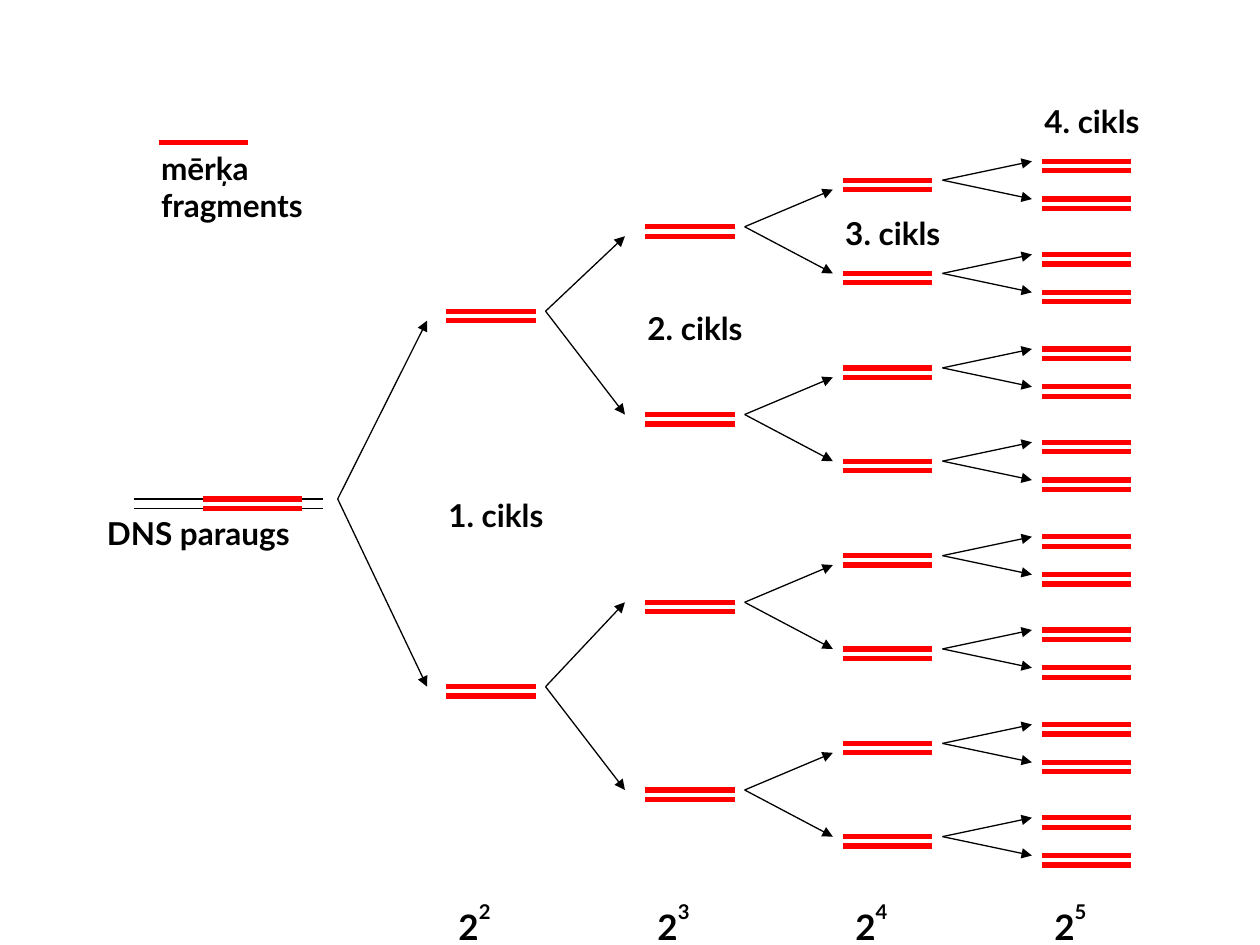
from dataclasses import dataclass

from lxml.etree import SubElement
from pptx import Presentation
from pptx.dml.color import RGBColor
from pptx.enum.shapes import MSO_CONNECTOR
from pptx.enum.text import MSO_AUTO_SIZE
from pptx.oxml.ns import qn
from pptx.util import Inches, Pt

BLACK = RGBColor(0, 0, 0)
RED = RGBColor(255, 0, 0)
FONT = "Lato"
WIDTH = 0.71
GAP = 0.075
ROOT = 3.96


@dataclass
class Cycle:
    left: float
    start: float
    end: float
    rise: float
    fall: float
    drops: tuple
    label: float


CYCLES = [
    Cycle(3.54, 2.68, 3.39, 1.49, 1.49, (GAP,), 3.89),
    Cycle(5.12, 4.33, 4.96, 0.67, 0.82, (GAP, 0), 2.4),
    Cycle(6.69, 5.91, 6.61, 0.37, 0.37, (GAP,) * 4, 1.65),
    Cycle(8.27, 7.48, 8.19, 0.15, 0.15, (0,) * 8, 0.76),
]


def add_line(slide, x1, y1, x2, y2, color=BLACK, weight=0.75, arrow=False):
    line = slide.shapes.add_connector(
        MSO_CONNECTOR.STRAIGHT, Inches(x1), Inches(y1), Inches(x2), Inches(y2))
    line.line.color.rgb = color
    line.line.width = Pt(weight)
    if arrow:
        SubElement(line.line._get_or_add_ln(), qn("a:tailEnd"), type="triangle")
    SubElement(line._element.spPr, qn("a:effectLst"))


def add_strand(slide, x, y, width=WIDTH):
    add_line(slide, x, y, x + width, y, RED, 3)


def add_pair(slide, x, y, width=WIDTH):
    for level in (y, y + GAP):
        add_strand(slide, x, level, width)


def add_text(slide, lines, x, y, width, height, size=18, wrap=False, power=""):
    frame = slide.shapes.add_textbox(
        Inches(x), Inches(y), Inches(width), Inches(height)).text_frame
    frame.word_wrap = wrap
    frame.auto_size = MSO_AUTO_SIZE.SHAPE_TO_FIT_TEXT
    frame.text = "\n".join(lines)
    if power:
        run = frame.paragraphs[0].add_run()
        run.text = power
        run._r.get_or_add_rPr().set("baseline", "60000")
    for para in frame.paragraphs:
        font = para.font
        font.name = FONT
        font.size = Pt(size)
        font.bold = True
        font.color.rgb = BLACK


def add_sample(slide):
    for y in (ROOT, ROOT + GAP):
        add_line(slide, 1.06, y, 1.61, y)
        add_line(slide, 2.4, y, 2.56, y)
    add_pair(slide, 1.61, ROOT, 0.79)
    add_text(slide, ["DNS paraugs"], 0.75, 4.03, 1.97, 0.4, wrap=True)


def add_legend(slide):
    add_strand(slide, 1.26, 1.13)
    add_text(slide, ["mērķa", "fragments"], 1.18, 1.13, 1.77, 0.71, wrap=True)


def add_cycle(slide, number, cycle, parents):
    children = []
    for y, drop in zip(parents, cycle.drops):
        upper, lower = y - cycle.rise, y + cycle.fall
        for tip in (upper + drop, lower):
            add_line(slide, cycle.start, y, cycle.end, tip, arrow=True)
        for child in (upper, lower):
            add_pair(slide, cycle.left, child)
        children += [upper, lower]
    add_text(slide, [f"{number}. cikls"], cycle.left - 0.08, cycle.label, 1.08, 0.4)
    add_text(slide, ["2"], cycle.left, 7.09, 0.5, 0.44, size=20, power=str(number + 1))
    return children


def main():
    deck = Presentation()
    deck.slide_width = Inches(10)
    deck.slide_height = Inches(7.5)
    slide = deck.slides.add_slide(deck.slide_layouts[6])
    add_sample(slide)
    add_legend(slide)
    nodes = [ROOT]
    for number, cycle in enumerate(CYCLES, 1):
        nodes = add_cycle(slide, number, cycle, nodes)
    deck.save("out.pptx")


if __name__ == "__main__":
    main()
